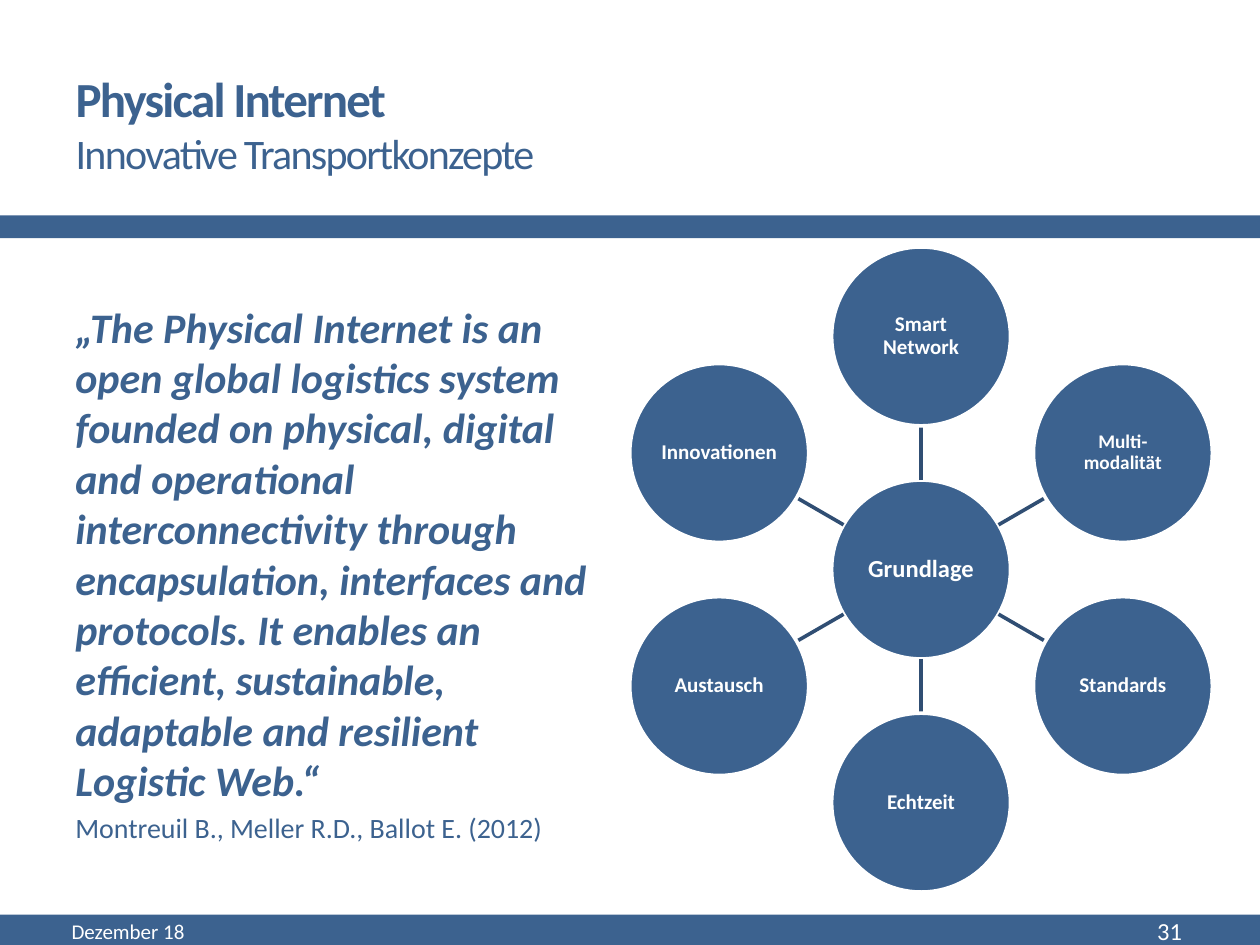
"""Build the Physical Internet slide with a quotation and a hub-and-spoke diagram."""
import math

from lxml import etree
from pptx import Presentation
from pptx import util as u
from pptx.dml.color import RGBColor
from pptx.enum import shapes, text
from pptx.oxml.ns import qn

BLUE = RGBColor(0x3C, 0x62, 0x8F)
DARK_BLUE = RGBColor(0x30, 0x4E, 0x73)
WHITE = RGBColor(0xFF, 0xFF, 0xFF)
FONT = "Calibri"

TITLE = "Physical Internet\vInnovative Transportkonzepte"
QUOTE = (
    "„The Physical Internet is an open global logistics system founded on physical, "
    "digital and operational interconnectivity through encapsulation, interfaces and "
    "protocols. It enables an efficient, sustainable, adaptable and resilient Logistic Web.“"
)
SOURCE = "Montreuil B., Meller R.D., Ballot E. (2012)"
BARS = [(1.71, 0.18), (7.26, 0.24)]
FOOTERS = [
    ("Dezember 18", 0.47, 3.17, 12, text.PP_ALIGN.LEFT),
    ("31", 8.31, 1.17, 14, text.PP_ALIGN.RIGHT),
]
HUB = ("Grundlage", 14)
SATELLITES = [
    ("Smart Network", 12),
    ("Multi-modalität", 11),
    ("Standards", 12),
    ("Echtzeit", 12),
    ("Austausch", 12),
    ("Innovationen", 12),
]
CENTER_X, CENTER_Y = 7.31, 4.52
DIAMETER, ORBIT = 1.42, 1.85
LINE_WIDTH = u.Pt(2.08)


def style(span, size, color, bold=False, italic=False):
    """Format one run."""
    font = span.font
    font.name, font.size, font.bold, font.italic = FONT, u.Pt(size), bold, italic
    font.color.rgb = color


def add_filled(page, kind, left, top, width, height):
    """Add a flat blue shape."""
    shape = page.shapes.add_shape(kind, *map(u.Inches, (left, top, width, height)))
    shape.shadow.inherit = False
    shape.fill.solid()
    shape.fill.fore_color.rgb = BLUE
    shape.line.fill.background()
    return shape


def add_text_box(page, left, top, width, height):
    """Add a wrapping text box."""
    box = page.shapes.add_textbox(*map(u.Inches, (left, top, width, height)))
    box.text_frame.word_wrap = True
    return box.text_frame


def add_circle(page, x, y, label, size):
    """Add a labelled circle around a center point."""
    circle = add_filled(page, shapes.MSO_SHAPE.OVAL, x - DIAMETER / 2, y - DIAMETER / 2,
                        DIAMETER, DIAMETER)
    circle.line.color.rgb = WHITE
    circle.line.width = LINE_WIDTH
    frame = circle.text_frame
    frame.margin_left = frame.margin_right = u.Inches(0.01)
    frame.margin_top = frame.margin_bottom = u.Inches(0.01)
    frame.vertical_anchor = text.MSO_ANCHOR.MIDDLE
    frame.text = label
    para = frame.paragraphs[0]
    para.alignment = text.PP_ALIGN.CENTER
    para.line_spacing = 0.9
    style(para.runs[0], size, WHITE, bold=True)


def add_spoke(page, start, end):
    """Add a plain line between two points."""
    spoke = page.shapes.add_connector(shapes.MSO_CONNECTOR.STRAIGHT,
                                      *map(u.Inches, (*start, *end)))
    spoke.line.color.rgb = DARK_BLUE
    spoke.line.width = LINE_WIDTH
    etree.SubElement(spoke.element.spPr, qn("a:effectLst"))


def orbit_point(angle, radius):
    """Return the point at an angle and radius from the hub."""
    return CENTER_X + radius * math.cos(angle), CENTER_Y + radius * math.sin(angle)


def add_title(page):
    """Place and format the title placeholder."""
    title = page.shapes.title
    title.left, title.top, title.width, title.height = map(u.Inches, (0.5, 0.44, 5.21, 1.08))
    frame = title.text_frame
    frame.text = TITLE
    frame.auto_size = text.MSO_AUTO_SIZE.NONE
    frame.vertical_anchor = text.MSO_ANCHOR.MIDDLE
    para = frame.paragraphs[0]
    para.alignment = text.PP_ALIGN.LEFT
    for span, size, bold in zip(para.runs, (28, 24), (True, False)):
        style(span, size, BLUE, bold)
        span.font._element.set("spc", "-100")


def add_quote(page):
    """Add the quotation and its source."""
    frame = add_text_box(page, 0.5, 2.34, 4.5, 4.74)
    frame.text = f"{QUOTE}\n{SOURCE}"
    quote, source = frame.paragraphs
    style(quote.runs[0], 24, BLUE, bold=True, italic=True)
    style(source.runs[0], 16, BLUE)
    source.space_before = u.Pt(3)


def add_diagram(page):
    """Add the hub, its spokes and the surrounding circles."""
    add_circle(page, CENTER_X, CENTER_Y, *HUB)
    for index, (label, size) in enumerate(SATELLITES):
        angle = math.tau * index / len(SATELLITES) - math.pi / 2
        add_spoke(page, orbit_point(angle, DIAMETER / 2),
                  orbit_point(angle, ORBIT - DIAMETER / 2))
        add_circle(page, *orbit_point(angle, ORBIT), label, size)


def main():
    """Assemble and save the deck."""
    deck = Presentation()
    deck.slide_width, deck.slide_height = u.Inches(10), u.Inches(7.5)
    page = deck.slides.add_slide(deck.slide_layouts[5])
    for top, height in BARS:
        add_filled(page, shapes.MSO_SHAPE.RECTANGLE, 0, top, 10, height)
    add_title(page)
    add_quote(page)
    for label, left, width, size, alignment in FOOTERS:
        frame = add_text_box(page, left, 7.21, width, 0.36)
        frame.vertical_anchor = text.MSO_ANCHOR.MIDDLE
        frame.text = label
        frame.paragraphs[0].alignment = alignment
        style(frame.paragraphs[0].runs[0], size, WHITE)
    add_diagram(page)
    deck.save("out.pptx")


if __name__ == "__main__":
    main()
